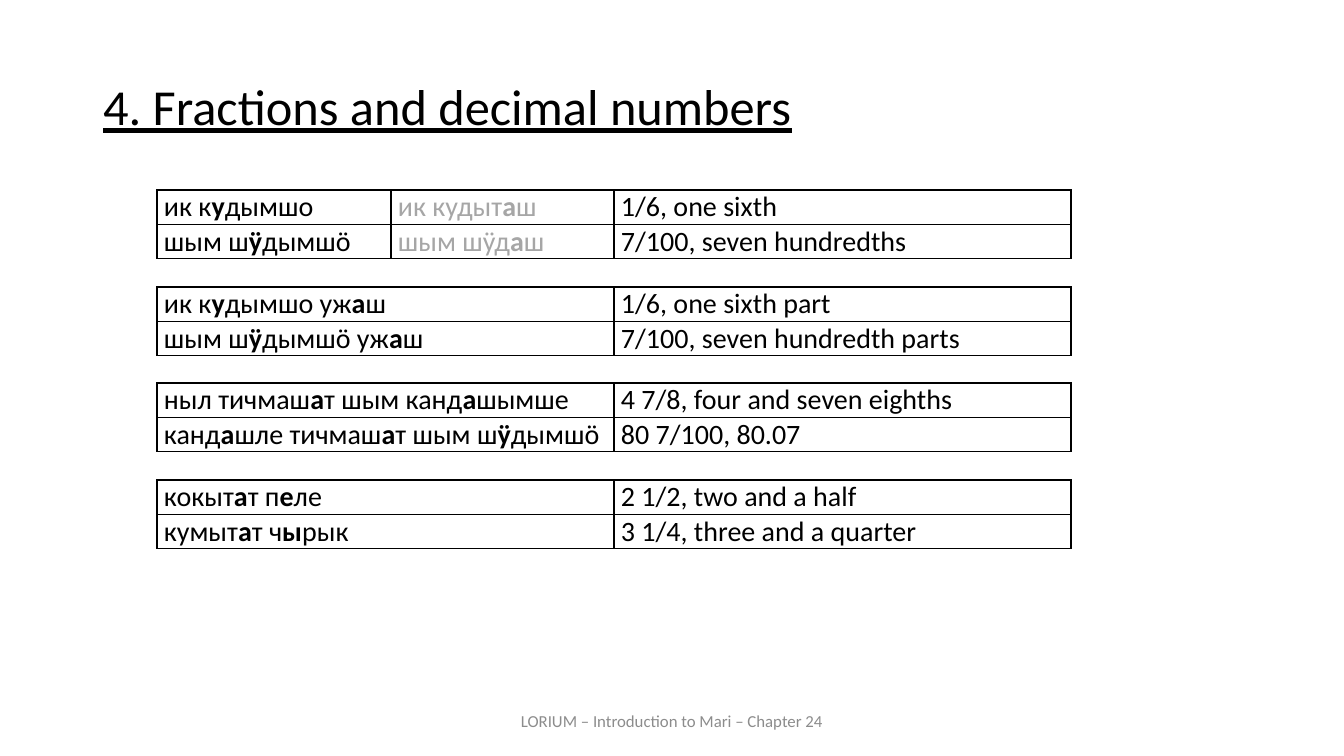
from lxml.etree import SubElement
from pptx import Presentation
from pptx.dml.color import RGBColor
from pptx.enum.text import MSO_ANCHOR, MSO_AUTO_SIZE, PP_ALIGN
from pptx.oxml.ns import qn
from pptx.util import Pt

EMU_PER_PX = 12192000 / 1344
FONT = "Calibri"
COLOURS = {"ink": "000000", "variant": "A6A6A6", "footer": "8C8C8C"}

TABLES_TOP, BLOCK_SPAN = 190, 290
ROW_HEIGHT = 34
MARI_LEFT, VARIANT_LEFT, ENGLISH_LEFT, TABLES_RIGHT = 157, 391, 614, 1071

# Asterisks enclose the stressed vowel, which is set in bold.
# Each block lists its columns: Mari, an optional variant, English.
BLOCKS = [
    [["ик к*у*дымшо", "шым ш*ӱ*дымшӧ"],
     ["ик кудыт*а*ш", "шым шӱд*а*ш"],
     ["1/6, one sixth", "7/100, seven hundredths"]],
    [["ик к*у*дымшо уж*а*ш", "шым ш*ӱ*дымшӧ уж*а*ш"],
     ["1/6, one sixth part", "7/100, seven hundredth parts"]],
    [["ныл тичмаш*а*т шым канд*а*шымше",
      "канд*а*шле тичмаш*а*т шым ш*ӱ*дымшӧ"],
     ["4 7/8, four and seven eighths", "80 7/100, 80.07"]],
    [["кокыт*а*т п*е*ле", "кумыт*а*т ч*ы*рык"],
     ["2 1/2, two and a half", "3 1/4, three and a quarter"]],
]


def px(length):
    return round(length * EMU_PER_PX)


def format_run(run, size, colour, bold=False, underline=False):
    run.font.name = FONT
    run.font.size = Pt(size)
    run.font.color.rgb = RGBColor.from_string(COLOURS[colour])
    run.font.bold = bold
    run.font.underline = underline


def place_title(slide, left, top, width, height):
    title = slide.shapes.title
    title.left, title.top, title.width, title.height = map(px, (left, top, width, height))
    frame = title.text_frame
    frame.text = "4. Fractions and decimal numbers"
    frame.auto_size = MSO_AUTO_SIZE.NONE
    frame.vertical_anchor = MSO_ANCHOR.TOP
    heading = frame.paragraphs[0]
    heading.alignment = PP_ALIGN.JUSTIFY
    heading.line_spacing = 0.9
    format_run(heading.runs[0], 36, "ink", underline=True)


def place_footer(slide, left, top, width, height):
    footer = slide.shapes.add_textbox(*map(px, (left, top, width, height)))
    frame = footer.text_frame
    frame.word_wrap = True
    frame.vertical_anchor = MSO_ANCHOR.MIDDLE
    frame.text = "LORIUM – Introduction to Mari – Chapter 24"
    credit = frame.paragraphs[0]
    credit.alignment = PP_ALIGN.CENTER
    format_run(credit.runs[0], 12, "footer")


def draw_borders(cell):
    properties = cell._tc.get_or_add_tcPr()
    for side in ("a:lnL", "a:lnR", "a:lnT", "a:lnB"):
        line = SubElement(properties, qn(side), w=str(Pt(1)))
        fill = SubElement(line, qn("a:solidFill"))
        SubElement(fill, qn("a:srgbClr"), val=COLOURS["ink"])


def fill_cell(cell, phrase, colour):
    cell.margin_left = cell.margin_right = px(7)
    cell.margin_top = cell.margin_bottom = 0
    draw_borders(cell)
    cell.fill.background()
    paragraph = cell.text_frame.paragraphs[0]
    paragraph.alignment = PP_ALIGN.JUSTIFY
    for index, part in enumerate(phrase.split("*")):
        run = paragraph.add_run()
        run.text = part
        format_run(run, 20, colour, bold=index % 2 == 1)


def place_column(slide, left, top, width, phrases, colour):
    """Add a one-column table with a row for each phrase."""
    table = slide.shapes.add_table(
        len(phrases), 1, px(left), px(top), px(width), px(ROW_HEIGHT * len(phrases))
    ).table
    table.first_row = table.horz_banding = False
    for row, phrase in enumerate(phrases):
        fill_cell(table.cell(row, 0), phrase, colour)


def place_block(slide, top, columns):
    """Set the columns of one block side by side across the full width."""
    if len(columns) == 3:
        edges = [MARI_LEFT, VARIANT_LEFT, ENGLISH_LEFT, TABLES_RIGHT]
        colours = ["ink", "variant", "ink"]
    else:
        edges = [MARI_LEFT, ENGLISH_LEFT, TABLES_RIGHT]
        colours = ["ink", "ink"]
    for left, right, phrases, colour in zip(edges, edges[1:], columns, colours):
        place_column(slide, left, top, right - left, phrases, colour)


def build_fractions_slide(presentation):
    slide = presentation.slides.add_slide(presentation.slide_layouts[5])
    place_title(slide, 93, 77, 1159, 84)
    for index, columns in enumerate(BLOCKS):
        top = TABLES_TOP + round(index * BLOCK_SPAN / (len(BLOCKS) - 1))
        place_block(slide, top, columns)
    place_footer(slide, 445, 701, 454, 40)


def main():
    presentation = Presentation()
    presentation.slide_width, presentation.slide_height = px(1344), px(756)
    build_fractions_slide(presentation)
    presentation.save("out.pptx")


if __name__ == "__main__":
    main()
